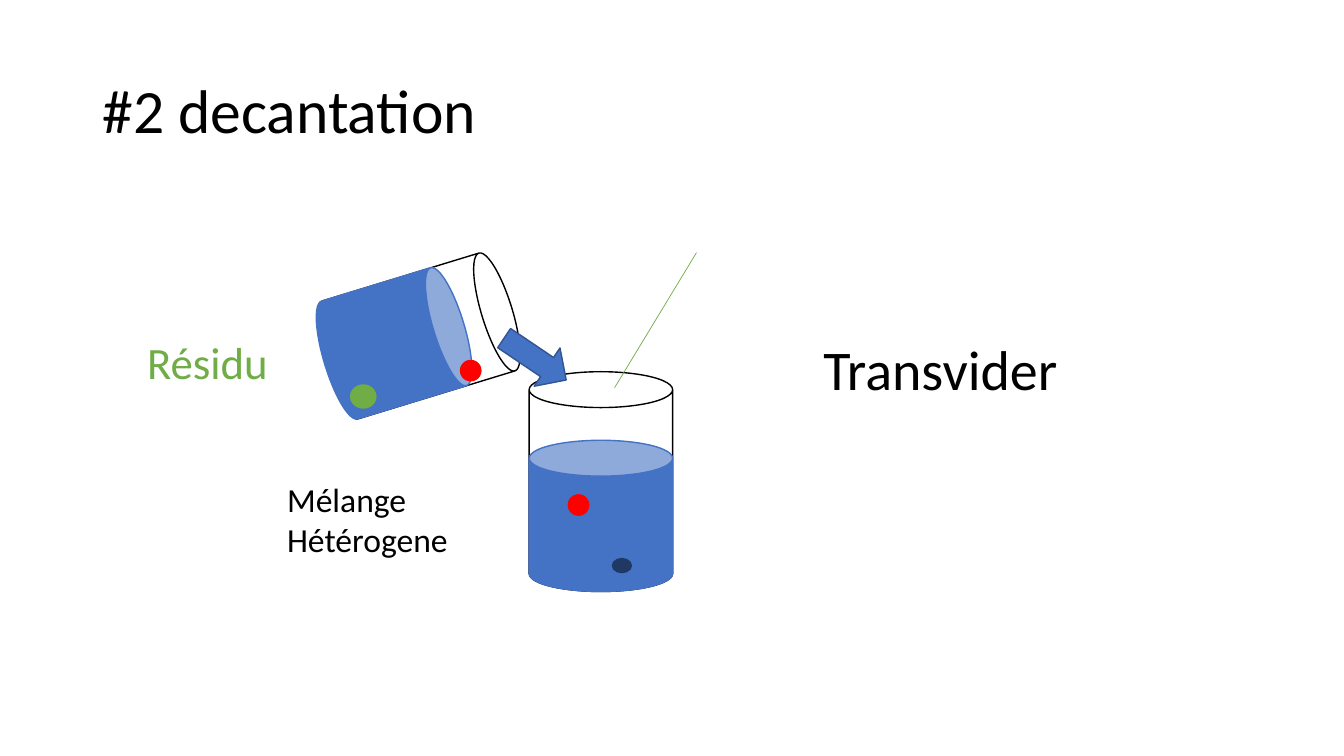
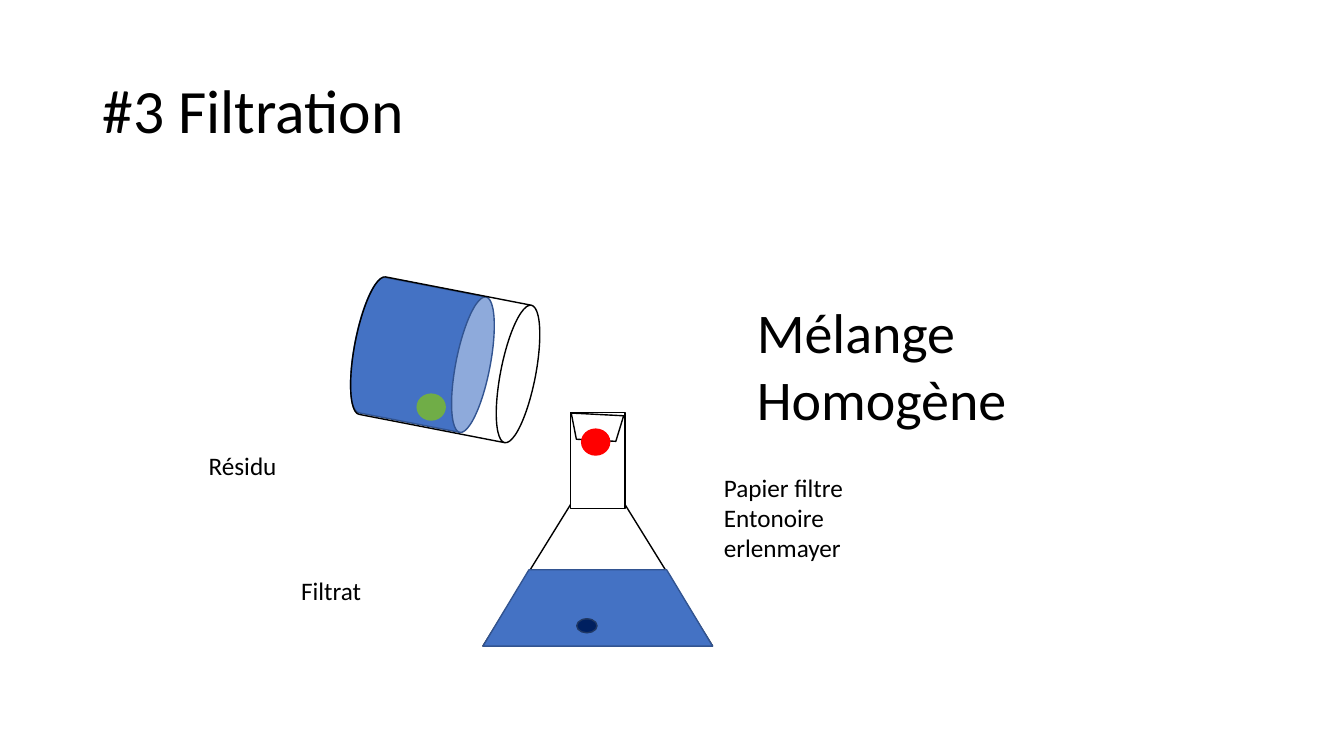
from pptx import Presentation
from pptx.dml.color import RGBColor
from pptx.enum.shapes import MSO_CONNECTOR, MSO_SHAPE
from pptx.enum.text import MSO_ANCHOR, MSO_AUTO_SIZE, PP_ALIGN
from pptx.oxml.ns import qn
from pptx.util import Pt
from lxml.etree import SubElement

COLORS = {
    "ink": "000000",
    "paper": "FFFFFF",
    "liquid": "4472C4",
    "liquid_edge": "325491",
    "residue": "70AD47",
    "red": "FF0000",
    "navy": "203864",
    "deep_navy": "002060",
}
TITLE_BOX = (66, 29, 828, 104.5)
TITLE_FRAME = {"vertical_anchor": MSO_ANCHOR.MIDDLE, "word_wrap": True,
               "auto_size": MSO_AUTO_SIZE.NONE}
TITLE_PARAGRAPH = {"alignment": PP_ALIGN.LEFT, "line_spacing": 0.9}
LABEL_FRAME = {"word_wrap": True, "auto_size": MSO_AUTO_SIZE.SHAPE_TO_FIT_TEXT}


def rgb(color):
    return RGBColor.from_string(COLORS[color])


def points(values):
    return [Pt(value) for value in values]


def apply_format(target, values):
    for name, value in values.items():
        setattr(target, name, value)


def format_text(paragraph, size, color):
    apply_format(paragraph.font, {"name": "Calibri", "size": Pt(size)})
    paragraph.font.color.rgb = rgb(color)


def add_titled_slide(deck, heading):
    slide = deck.slides.add_slide(deck.slide_layouts[5])
    title = slide.shapes.title
    apply_format(title, dict(zip(("left", "top", "width", "height"), points(TITLE_BOX))))
    title.text = heading
    apply_format(title.text_frame, TITLE_FRAME)
    paragraph = title.text_frame.paragraphs[0]
    apply_format(paragraph, TITLE_PARAGRAPH)
    format_text(paragraph, 44, "ink")
    return slide


def add_label(slide, box, text, size, color="ink"):
    frame = slide.shapes.add_textbox(*points(box)).text_frame
    frame.text = text
    apply_format(frame, LABEL_FRAME)
    for paragraph in frame.paragraphs:
        format_text(paragraph, size, color)


def add_part(slide, kind, box, fill=None, edge="ink", rotation=0):
    part = slide.shapes.add_shape(kind, *points(box))
    part.shadow.inherit = False
    apply_format(part, {"rotation": rotation})
    if fill:
        part.fill.solid()
        part.fill.fore_color.rgb = rgb(fill)
    else:
        part.fill.background()
    part.line.color.rgb = rgb(edge)
    part.line.width = Pt(1)


def add_particle(slide, box, color, edge=None):
    add_part(slide, MSO_SHAPE.OVAL, box, color, edge or color)


def add_pointer(slide, start, end, color):
    pointer = slide.shapes.add_connector(MSO_CONNECTOR.STRAIGHT, *points(start + end))
    pointer.line.color.rgb = rgb(color)
    pointer.line.width = Pt(0.5)
    SubElement(pointer._element.spPr, qn("a:effectLst"))


def build_decantation(deck):
    slide = add_titled_slide(deck, "#2 decantation")

    # Beakers and their liquid
    add_part(slide, MSO_SHAPE.CAN, (378, 265.5, 102.5, 157))
    add_part(slide, MSO_SHAPE.CAN, (255, 170.5, 88, 139), rotation=73)
    add_part(slide, MSO_SHAPE.CAN, (237.5, 193.5, 88, 103.5), "liquid", "liquid", 73)
    add_part(slide, MSO_SHAPE.CAN, (378, 314.5, 102.5, 108), "liquid", "liquid")

    # Labels
    add_label(slide, (581, 235.5, 201.5, 55.5), "Transvider", 40)
    add_label(slide, (98, 235.5, 111, 46), "Résidu", 32, "residue")
    add_label(slide, (198, 338.5, 130.5, 65.5), "Mélange\nHétérogene", 24)
    add_pointer(slide, (497.5, 180.5), (439, 277), "residue")

    # Particles and pouring arrow
    add_particle(slide, (250.5, 275, 18, 16.5), "residue")
    add_particle(slide, (437.5, 399, 13.5, 10), "navy")
    for left, top in ((406, 353.5), (329, 257.5)):
        add_particle(slide, (left, top, 14.5, 14.5), "red")
    add_part(slide, MSO_SHAPE.RIGHT_ARROW, (355.5, 240, 53.5, 33),
             "liquid", "liquid_edge", 34)


def build_filtration(deck):
    slide = add_titled_slide(deck, "#3 Filtration")

    # Tilted beaker
    add_part(slide, MSO_SHAPE.CAN, (252.5, 204.5, 98.5, 98), "liquid", "liquid_edge", 101)
    add_part(slide, MSO_SHAPE.CAN, (268, 191.5, 100, 131), rotation=101)

    # Flask: cone, neck, filtrate and filter
    add_part(slide, MSO_SHAPE.FLOWCHART_EXTRACT, (345, 329, 164, 132.5))
    add_part(slide, MSO_SHAPE.RECTANGLE, (407.5, 294.5, 39, 69), "paper")
    add_part(slide, MSO_SHAPE.FLOWCHART_MANUAL_OPERATION, (345, 407, 164, 54.5),
             "liquid", "liquid_edge", 180)
    add_part(slide, MSO_SHAPE.TRAPEZOID, (407.5, 296, 37.5, 18.5), "paper", rotation=183)

    # Particles
    add_particle(slide, (298, 281.5, 20, 18.5), "residue")
    add_particle(slide, (415.5, 306.5, 20, 18.5), "red")
    add_particle(slide, (412, 442, 14.5, 10), "deep_navy", "navy")

    # Labels
    add_label(slide, (208, 407.5, 137, 29), "Filtrat", 18)
    add_label(slide, (142, 318, 121.5, 29), "Résidu", 18)
    add_label(slide, (510, 333.5, 163.5, 73), "Papier filtre\nEntonoire\nerlenmayer", 18)
    add_label(slide, (533.5, 209, 222, 104.5), "Mélange\nHomogène", 40)


def main():
    deck = Presentation()
    apply_format(deck, {"slide_width": Pt(960), "slide_height": Pt(540)})
    build_decantation(deck)
    build_filtration(deck)
    deck.save("out.pptx")


if __name__ == "__main__":
    main()
